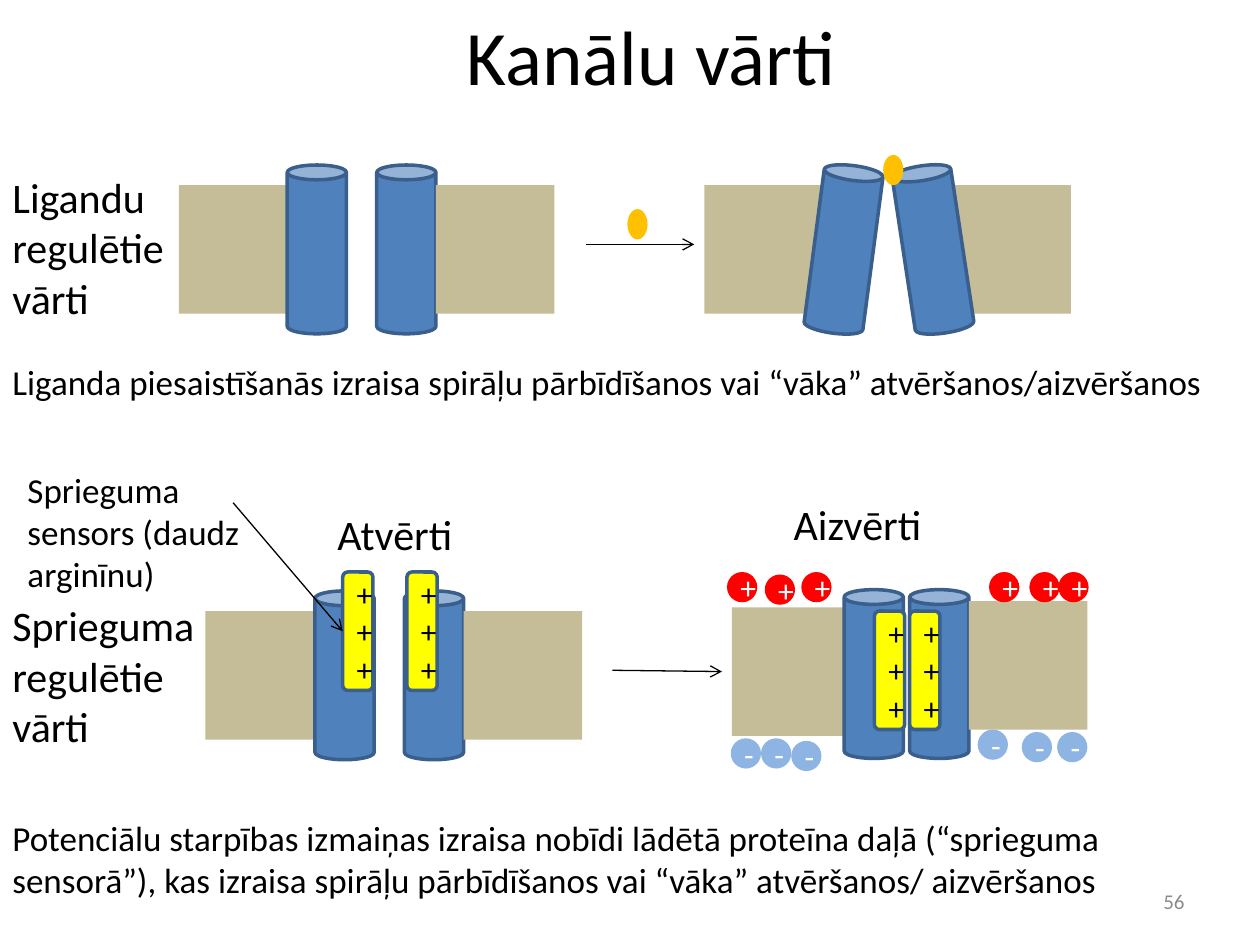
from lxml.etree import SubElement
from pptx import Presentation
from pptx.dml.color import RGBColor
from pptx.enum.shapes import MSO_CONNECTOR as Connector, MSO_SHAPE as Shape
from pptx.enum.text import MSO_ANCHOR as Anchor, MSO_AUTO_SIZE as AutoSize, PP_ALIGN as Align
from pptx.oxml.ns import qn
from pptx.util import Inches, Pt

COLUMNS, ROWS = 100, 75
WIDTH, HEIGHT = Inches(10), Inches(7.5)
BLACK, WHITE, GREY = "000000", "FFFFFF", "8C8C8C"
BEIGE, BLUE, NAVY, ORANGE = "C4BD97", "4F81BD", "3A5F8C", "FFC000"
RED, LIGHT_BLUE, YELLOW = "FF0000", "8EB4E3", "FFFF00"
MEMBRANE, HELIX, LIGAND = (9.4, 10.2), (4.7, 13.4), (1.6, 2.4)
ION, SENSOR = (2.4, 2.4), (2.4, 9.4)

LABELS = [
    ((0, 13.1, 20.1, 13.1), "Ligandu regulētie vārti", 24),
    ((25.8, 39.9, 18.9, 5), "Atvērti", 24),
    ((62, 39.1, 18.9, 5), "Aizvērti", 24),
    ((0, 47.1, 20.1, 13.1), "Sprieguma regulētie vārti", 24),
    ((0, 28.1, 96.5, 4.4), "Liganda piesaistīšanās izraisa spirāļu pārbīdīšanos "
     "vai “vāka” atvēršanos/aizvēršanos", 20),
    ((0, 64.3, 100, 7.7), "Potenciālu starpības izmaiņas izraisa nobīdi lādētā proteīna daļā "
     "(“sprieguma sensorā”), kas izraisa spirāļu pārbīdīšanos vai “vāka” "
     "atvēršanos/ aizvēršanos", 20),
    ((1.2, 36.7, 22.4, 11.1), "Sprieguma sensors (daudz arginīnu)", 20),
]
CATIONS = [(84, 45.4), (57.7, 45.4), (60.7, 45.6), (81.7, 45.4), (78.5, 45.4), (63.6, 45.4)]
ANIONS = [(58, 58.6), (60.4, 58.6), (62.8, 58.8), (77.6, 57.9), (81.1, 58.1), (83.9, 58.1)]


def color(value):
    return RGBColor.from_string(value)


def grid(column, row):
    return round(WIDTH * column / COLUMNS), round(HEIGHT * row / ROWS)


def write(shape, text, size, ink, align, anchor):
    frame = shape.text_frame
    frame.word_wrap = True
    frame.vertical_anchor = anchor
    paragraph = frame.paragraphs[0]
    paragraph.alignment = align
    run = paragraph.add_run()
    run.text = text
    for name, value in {"name": "Calibri", "size": Pt(size)}.items():
        setattr(run.font, name, value)
    run.font.color.rgb = color(ink)


def add_text(slide, box, text, size, ink=BLACK, align=Align.LEFT, anchor=Anchor.TOP, grow=False):
    shape = slide.shapes.add_textbox(*grid(*box[:2]), *grid(*box[2:]))
    write(shape, text, size, ink, align, anchor)
    if grow:
        shape.text_frame.auto_size = AutoSize.SHAPE_TO_FIT_TEXT


def add_figure(slide, kind, position, size, fill, outline=None, rotation=0):
    shape = slide.shapes.add_shape(kind, *grid(*position), *grid(*size))
    shape.shadow.inherit = False
    shape.rotation = rotation
    shape.fill.solid()
    shape.fill.fore_color.rgb = color(fill)
    if outline:
        shape.line.color.rgb = color(outline)
        shape.line.width = Pt(2)
    else:
        shape.line.fill.background()
    return shape


def add_channel(slide, membranes, helices, tilts=(0, 0)):
    left, right = [(Shape.RECTANGLE, place, MEMBRANE, BEIGE) for place in membranes]
    cans = [(Shape.CAN, place, HELIX, BLUE, NAVY, tilt) for place, tilt in zip(helices, tilts)]
    layers = [left, right, *cans] if any(tilts) else [left, *cans, right]
    for layer in layers:
        add_figure(slide, *layer)


def add_ions(slide, places, sign, fill):
    for place in places:
        ion = add_figure(slide, Shape.OVAL, place, ION, fill)
        write(ion, sign, 18, WHITE, Align.CENTER, Anchor.MIDDLE)


def add_sensor(slide, place):
    sensor = add_figure(slide, Shape.ROUNDED_RECTANGLE, place, SENSOR, YELLOW, NAVY)
    write(sensor, "+++", 18, BLACK, Align.CENTER, Anchor.MIDDLE)
    return sensor


def add_arrow(slide, start, end, target=None):
    arrow = slide.shapes.add_connector(Connector.STRAIGHT, *grid(*start), *grid(*end))
    if target is not None:
        arrow.end_connect(target, 1)
    arrow.line.color.rgb = color(BLACK)
    arrow.line.width = Pt(0.75)
    SubElement(arrow.line._get_or_add_ln(), qn("a:tailEnd"), type="arrow")
    SubElement(arrow._element.spPr, qn("a:effectLst"))


def add_ligand_gate(slide):
    add_channel(slide, [(14.2, 14.7), (34.6, 14.7)], [(22.8, 13.1), (29.9, 13.1)])
    add_channel(slide, [(55.9, 14.7), (75.6, 14.7)], [(64.6, 13.1), (71.7, 13.1)], (7.5, 351.4))
    add_arrow(slide, (46.5, 19.4), (55.1, 19.4))
    for place in [(70.1, 12.3), (49.8, 16.6)]:
        add_figure(slide, Shape.OVAL, place, LIGAND, ORANGE)


def add_voltage_gate(slide):
    add_channel(slide, [(16.3, 48.5), (36.8, 48.5)], [(25, 46.9), (32.1, 46.9)])
    add_channel(slide, [(58.1, 48.2), (76.9, 47.7)], [(67, 46.8), (72.2, 46.8)])
    add_arrow(slide, (48.6, 53.2), (57.3, 53.3))
    add_ions(slide, CATIONS, "+", RED)
    add_ions(slide, ANIONS, "-", LIGHT_BLUE)
    places = [(27.2, 45.4), (32.3, 45.4), (72.2, 48.5), (69.4, 48.5)]
    sensors = [add_sensor(slide, place) for place in places]
    add_arrow(slide, (18.5, 39.9), (27.2, 50.1), sensors[0])


def main():
    presentation = Presentation()
    presentation.slide_width, presentation.slide_height = WIDTH, HEIGHT
    slide = presentation.slides.add_slide(presentation.slide_layouts[6])
    add_text(slide, (6.7, -1.9, 90, 12.5), "Kanālu vārti", 44,
             align=Align.CENTER, anchor=Anchor.MIDDLE)
    add_ligand_gate(slide)
    add_voltage_gate(slide)
    for box, text, size in LABELS:
        add_text(slide, box, text, size, grow=True)
    add_text(slide, (71.7, 69.5, 23.3, 4), "56", 12, GREY, Align.RIGHT, Anchor.MIDDLE)
    presentation.save("out.pptx")


if __name__ == "__main__":
    main()
